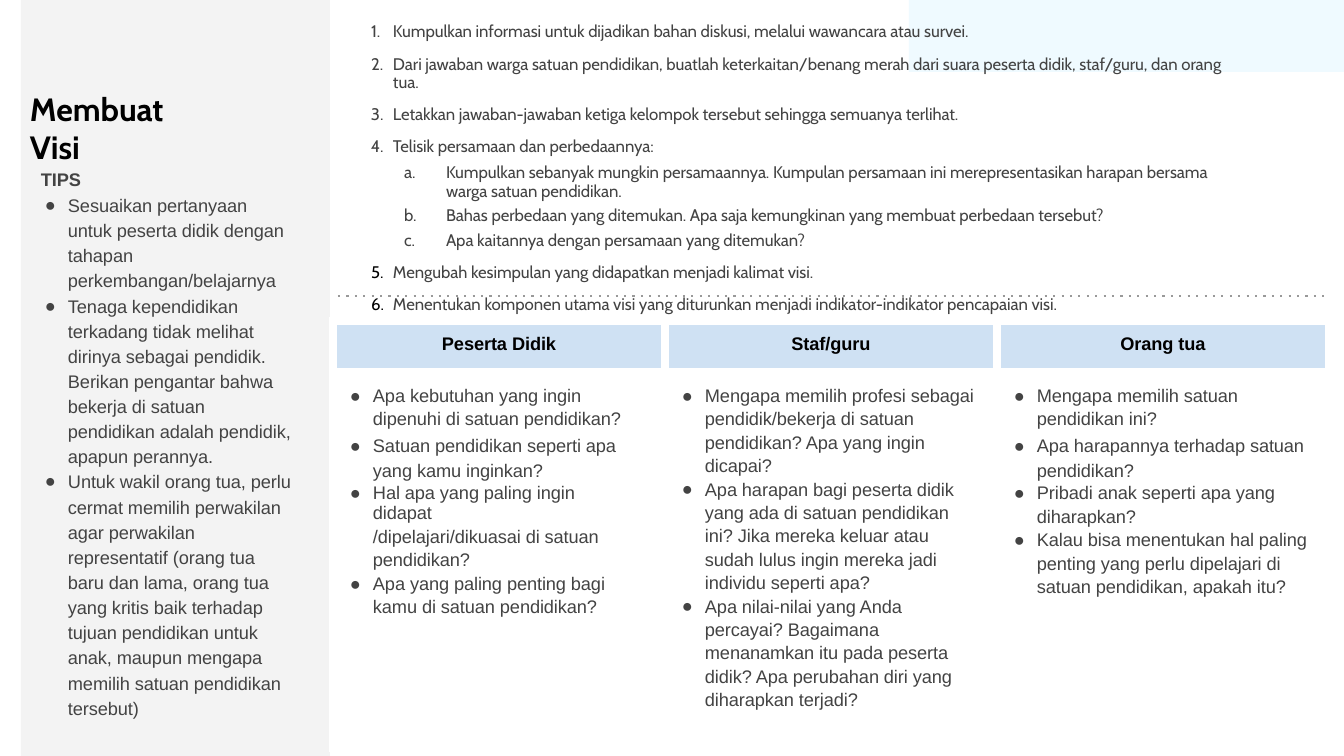
from lxml import etree
from pptx import Presentation
from pptx.dml.color import RGBColor
from pptx.enum.dml import MSO_LINE
from pptx.enum.shapes import MSO_CONNECTOR, MSO_SHAPE
from pptx.enum.text import PP_ALIGN
from pptx.oxml.ns import qn
from pptx.util import Emu, Pt

RECT, STRAIGHT = MSO_SHAPE.RECTANGLE, MSO_CONNECTOR.STRAIGHT
DOTS, CENTER = MSO_LINE.ROUND_DOT, PP_ALIGN.CENTER
SCALE = 914400 / 100.8
BLACK, GREY, WHITE = "000000", "434343", "FFFFFF"
DOT = "●"

# Lists hold (text, mark, space before, leading); no mark continues the item above
TIPS = [
    ("Sesuaikan pertanyaan untuk peserta didik dengan tahapan perkembangan/belajarnya", DOT, 0, 1.15),
    ("Tenaga kependidikan terkadang tidak melihat dirinya sebagai pendidik. Berikan pengantar bahwa "
     "bekerja di satuan pendidikan adalah pendidik, apapun perannya.", DOT, 0.1, 1.15),
    ("Untuk wakil orang tua, perlu", DOT, 2.3, 1.0),
    ("cermat memilih perwakilan agar perwakilan representatif (orang tua baru dan lama, orang tua "
     "yang kritis baik terhadap tujuan pendidikan untuk anak, maupun mengapa memilih satuan "
     "pendidikan tersebut)", "", 0.1, 1.15),
]
# Step boxes: left, top, width, height, top inset, hang, first number, mark colour, list
NUM, LET = "arabicPeriod", "alphaLcPeriod"
STEPS = [
    (369, 20, 875, 74, 1, 22, 1, GREY, [
        ("Kumpulkan informasi untuk dijadikan bahan diskusi, melalui wawancara atau survei.", NUM, 0, 1.0),
        ("Dari jawaban warga satuan pendidikan, buatlah keterkaitan/benang merah dari suara peserta didik, "
         "staf/guru, dan orang tua.", NUM, 10.1, 13)]),
    (369, 103, 606, 55, 1, 22, 3, GREY, [
        ("Letakkan jawaban-jawaban ketiga kelompok tersebut sehingga semuanya terlihat.", NUM, 0, 1.0),
        ("Telisik persamaan dan perbedaannya:", NUM, 8.5, 1.0)]),
    (402, 160, 817, 92, 4, 42, 1, GREY, [
        ("Kumpulkan sebanyak mungkin persamaannya. Kumpulan persamaan ini merepresentasikan harapan "
         "bersama warga satuan pendidikan.", LET, 0, 13),
        ("Bahas perbedaan yang ditemukan. Apa saja kemungkinan yang membuat perbedaan tersebut?",
         LET, 3.2, 1.0),
        ("Apa kaitannya dengan persamaan yang ditemukan?", LET, 3.6, 1.0)]),
    (369, 261, 480, 23, 1, 22, 5, BLACK, [
        ("Mengubah kesimpulan yang didapatkan menjadi kalimat visi.", NUM, 0, 1.0)]),
    (369, 293, 720, 23, 1, 22, 6, BLACK, [
        ("Menentukan komponen utama visi yang diturunkan menjadi indikator-indikator pencapaian visi.",
         NUM, 0, 1.0)]),
]
# Table columns: heading, right inset, questions
GROUPS = [
    ("Peserta Didik", 36, [
        ("Apa kebutuhan yang ingin dipenuhi di satuan pendidikan?", DOT, 0, 1.15),
        ("Satuan pendidikan seperti apa yang kamu inginkan?", DOT, 0.9, 18),
        ("Hal apa yang paling ingin didapat", DOT, 1.3, 1.0),
        ("/dipelajari/dikuasai di satuan pendidikan?", "", 0.1, 1.15),
        ("Apa yang paling penting bagi kamu di satuan pendidikan?", DOT, 0.1, 1.15)]),
    ("Staf/guru", 21, [
        ("Mengapa memilih profesi sebagai pendidik/bekerja di satuan pendidikan? Apa yang ingin dicapai?",
         DOT, 0, 1.15),
        ("Apa harapan bagi peserta didik", DOT, 2.3, 1.0),
        ("yang ada di satuan pendidikan ini? Jika mereka keluar atau sudah lulus ingin mereka jadi "
         "individu seperti apa?", "", 0.1, 1.15),
        ("Apa nilai-nilai yang Anda percayai? Bagaimana menanamkan itu pada peserta didik? Apa perubahan "
         "diri yang diharapkan terjadi?", DOT, 0.1, 1.15)]),
    ("Orang tua", 16, [
        ("Mengapa memilih satuan pendidikan ini?", DOT, 0, 1.15),
        ("Apa harapannya terhadap satuan pendidikan?", DOT, 0.8, 18),
        ("Pribadi anak seperti apa yang", DOT, 1.3, 1.0),
        ("diharapkan?", "", 2.4, 1.0),
        ("Kalau bisa menentukan hal paling", DOT, 2.3, 1.0),
        ("penting yang perlu dipelajari di satuan pendidikan, apakah itu?", "", 0.1, 1.15)]),
]


def px(n):
    return Emu(round(n * SCALE))


def color(code):
    return RGBColor.from_string(code)


def add(parent, tag, **attrs):
    node = etree.SubElement(parent, qn(tag))
    for key, val in attrs.items():
        node.set(key, str(val))
    return node


class Page:
    sans, head = "Arial", "Cabin"

    def __init__(self, deck):
        self.slide = deck.slides.add_slide(deck.slide_layouts[6])
        self.shapes = self.slide.shapes

    def block(self, x, y, w, h, fill):
        shape = self.shapes.add_shape(RECT, px(x), px(y), px(w), px(h))
        shape.shadow.inherit = False
        shape.fill.solid()
        shape.fill.fore_color.rgb = color(fill)
        shape.line.fill.background()

    def dots(self, x, y, w, tint):
        line = self.shapes.add_connector(STRAIGHT, px(x), px(y), px(x + w), px(y))
        line.line.color.rgb = color(tint)
        line.line.width = Pt(1.5)
        line.line.dash_style = DOTS
        props = line._element.spPr
        props.find(".//" + qn("a:prstDash")).set("val", "dot")
        add(props, "a:effectLst")

    def style(self, para, font, size, tint, bold=False):
        for run in para.runs:
            run.font.name, run.font.size, run.font.bold = font, Pt(size), bold
            run.font.color.rgb = color(tint)
            run._r.get_or_add_rPr().set("spc", "-5")

    def box(self, x, y, w, h, inset=1):
        frame = self.shapes.add_textbox(px(x), px(y), px(w), px(h)).text_frame
        frame.word_wrap = True
        frame.margin_left = frame.margin_right = frame.margin_bottom = 0
        frame.margin_top = px(inset)
        return frame

    def label(self, x, y, w, h, text, font, size, tint):
        frame = self.box(x, y, w, h)
        frame.text = text
        self.style(frame.paragraphs[0], font, size, tint, True)

    def items(self, frame, rows, font, size, left, hang, start=1, tint=GREY):
        frame.text = "\n".join(row[0] for row in rows)
        for para, (_, mark, before, lead) in zip(frame.paragraphs, rows):
            props = para._p.get_or_add_pPr()
            props.set("marL", str(px(left)))
            props.set("indent", str(-px(hang) if mark else 0))
            if mark:
                add(add(props, "a:buClr"), "a:srgbClr", val=tint)
                add(props, "a:buFont", typeface=font)
                if mark == DOT:
                    add(props, "a:buChar", char=mark)
                else:
                    add(props, "a:buAutoNum", type=mark, startAt=start)
            else:
                add(props, "a:buNone")
            para.line_spacing = Pt(lead) if lead > 2 else lead
            para.space_before = Pt(before)
            self.style(para, font, size, GREY)

    def cell(self, cell, top, right, fill):
        cell.margin_left = cell.margin_bottom = 0
        cell.margin_top, cell.margin_right = px(top), px(right)
        if fill:
            cell.fill.solid()
            cell.fill.fore_color.rgb = color(fill)
        else:
            cell.fill.background()
        props = cell._tc.get_or_add_tcPr()
        for at, side in enumerate("LRTB"):
            edge = add(props, "a:ln" + side, w=Pt(6))
            add(add(edge, "a:solidFill"), "a:srgbClr", val=WHITE)
            props.insert(at, edge)

    def table(self, x, y, wide, tall, groups):
        grid = self.shapes.add_table(2, len(groups), px(x), px(y), px(wide * len(groups)),
                                     px(sum(tall))).table
        grid.first_row = grid.horz_banding = False
        for row, high in zip(grid.rows, tall):
            row.height = px(high)
        for col, (title, right, rows) in enumerate(groups):
            grid.columns[col].width = px(wide)
            top, body = grid.cell(0, col), grid.cell(1, col)
            self.cell(top, 13, 0, "CFE1F3")
            top.text_frame.text = title
            para = top.text_frame.paragraphs[0]
            para.alignment = CENTER
            self.style(para, self.sans, 13, BLACK, True)
            self.cell(body, 11, right, None)
            self.items(body.text_frame, rows, self.sans, 13, 40, 23)


def main():
    deck = Presentation()
    deck.slide_width, deck.slide_height = px(1344), px(756)
    page = Page(deck)

    # Background panels
    page.block(909, 0, 435, 72, "EFFAFF")
    page.block(21, 0, 309, 756, "F3F3F3")

    # Title and steps
    page.label(30, 88, 190, 82, "Membuat Visi", page.head, 23, BLACK)
    for x, y, w, h, inset, hang, start, tint, rows in STEPS:
        frame = page.box(x, y, w, h, inset)
        page.items(frame, rows, page.head, 12, hang + 2, hang, start, tint)

    # Questions for each group
    page.table(333, 321, 332, (51, 376), GROUPS)
    page.dots(338, 296, 988, "999999")

    # Tips in the side panel
    page.label(41, 167, 60, 24, "TIPS", page.sans, 13, GREY)
    page.items(page.box(44, 190, 250, 530), TIPS, page.sans, 13, 24, 23)

    deck.save("out.pptx")


if __name__ == "__main__":
    main()
